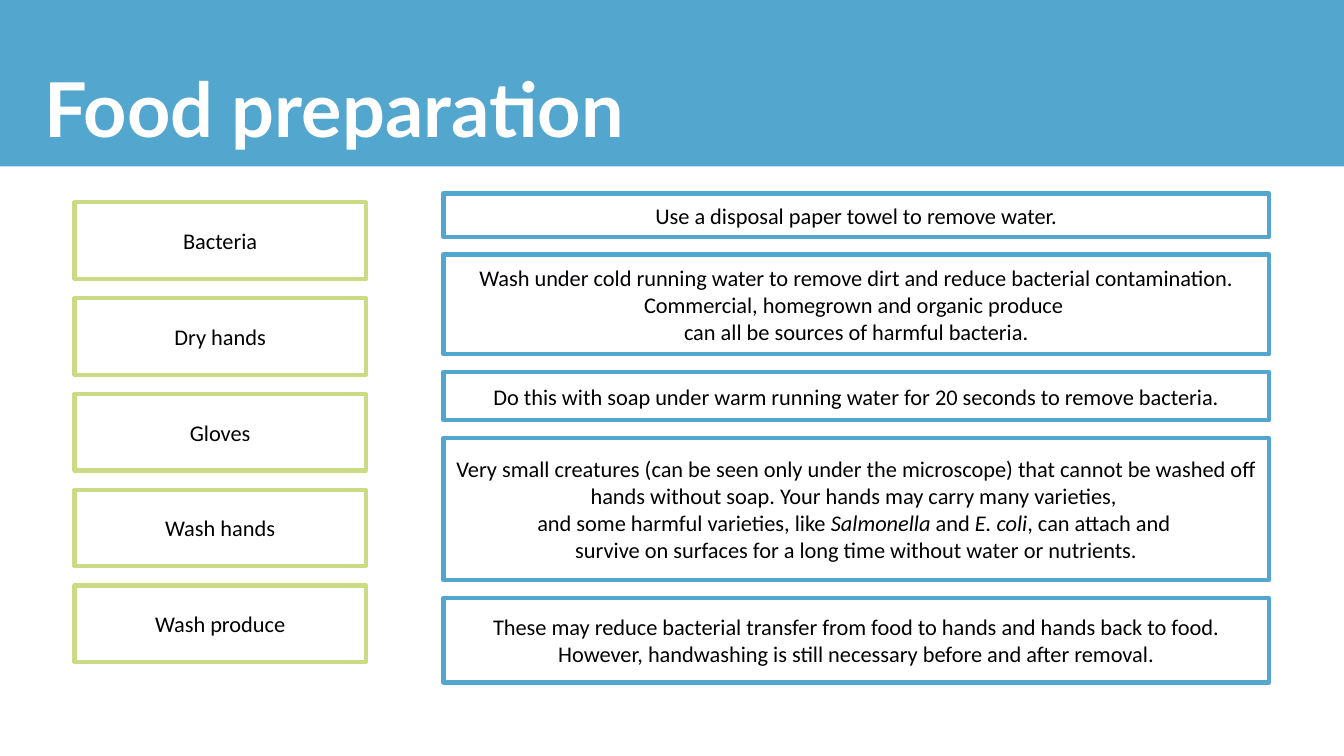
from pptx import Presentation
from pptx.dml.color import RGBColor
from pptx.enum.shapes import MSO_SHAPE
from pptx.enum.text import MSO_ANCHOR, MSO_AUTO_SIZE, PP_ALIGN
from pptx.util import Pt

# Content: asterisks enclose italic words, "\n" breaks a line
TITLE = "Food preparation"
TERMS = ["Bacteria", "Dry hands", "Gloves", "Wash hands", "Wash produce"]
FACTS = [  # (box height, text)
    (31, "Use a disposal paper towel to remove water."),
    (71.3, "Wash under cold running water to remove dirt and reduce bacterial "
           "contamination. Commercial, homegrown and organic produce \n"
           "can all be sources of harmful bacteria."),
    (34.6, "Do this with soap under warm running water for 20 seconds "
           "to remove bacteria."),
    (101.5, "Very small creatures (can be seen only under the microscope) that "
            "cannot be washed off hands without soap. Your hands may carry many "
            "varieties, \nand some harmful varieties, like *Salmonella* and "
            "*E. coli*, can attach and \nsurvive on surfaces for a long time "
            "without water or nutrients."),
    (60.5, "These may reduce bacterial transfer from food to hands and hands back "
           "to food. However, handwashing is still necessary before and after "
           "removal."),
]
COLORS = {"blue": "53A7CF", "green": "CBDB85", "white": "FFFFFF", "black": "000000"}

# Layout in points
WIDTH, HEIGHT = 960, 540
TERM_LEFT, TERM_TOP, TERM_WIDTH, TERM_HEIGHT, TERM_STEP = 53.3, 144.6, 208, 54.7, 68.4
FACT_LEFT, FACT_TOP, FACT_WIDTH, FACT_GAP = 316.8, 138.2, 589.7, 12.6


def color(name):
    return RGBColor.from_string(COLORS[name])


def write(shape, text, font="Calibri", size=16, ink="black", bold=False,
          align=PP_ALIGN.CENTER, spacing=1.0):
    frame = shape.text_frame
    frame.word_wrap = True
    frame.auto_size = MSO_AUTO_SIZE.NONE
    frame.vertical_anchor = MSO_ANCHOR.MIDDLE
    para = frame.paragraphs[0]
    para.alignment = align
    para.line_spacing = spacing
    for row, line in enumerate(text.split("\n")):
        if row:
            para.add_line_break()
        for part, words in enumerate(line.split("*")):
            run = para.add_run()
            run.text = words
            run.font.name = font
            run.font.size = Pt(size)
            run.font.bold = bold
            run.font.italic = part % 2 == 1
            run.font.color.rgb = color(ink)


def box(left, top, width, height, fill=None, line=None):
    shape = slide.shapes.add_shape(
        MSO_SHAPE.RECTANGLE, Pt(left), Pt(top), Pt(width), Pt(height))
    shape.shadow.inherit = False
    if fill:
        shape.fill.solid()
        shape.fill.fore_color.rgb = color(fill)
    else:
        shape.fill.background()
    if line:
        shape.line.color.rgb = color(line)
        shape.line.width = Pt(3)
    else:
        shape.line.fill.background()
    return shape


deck = Presentation()
deck.slide_width, deck.slide_height = Pt(WIDTH), Pt(HEIGHT)
slide = deck.slides.add_slide(deck.slide_layouts[5])

# Header band, placed behind the title
band = box(0, 0, WIDTH, 118.8, fill="blue")
slide.shapes.title._element.addprevious(band._element)

# Title
title = slide.shapes.title
title.left, title.top, title.width, title.height = Pt(24.5), Pt(28.8), Pt(527), Pt(104.4)
write(title, TITLE, font="Lato", size=54, ink="white", bold=True,
      align=PP_ALIGN.LEFT, spacing=0.9)

# Terms on the left, evenly spaced
for row, term in enumerate(TERMS):
    top = TERM_TOP + row * TERM_STEP
    write(box(TERM_LEFT, top, TERM_WIDTH, TERM_HEIGHT, line="green"), term)

# Facts on the right, stacked with equal gaps
top = FACT_TOP
for height, fact in FACTS:
    write(box(FACT_LEFT, top, FACT_WIDTH, height, fill="white", line="blue"), fact)
    top += height + FACT_GAP

deck.save("out.pptx")
